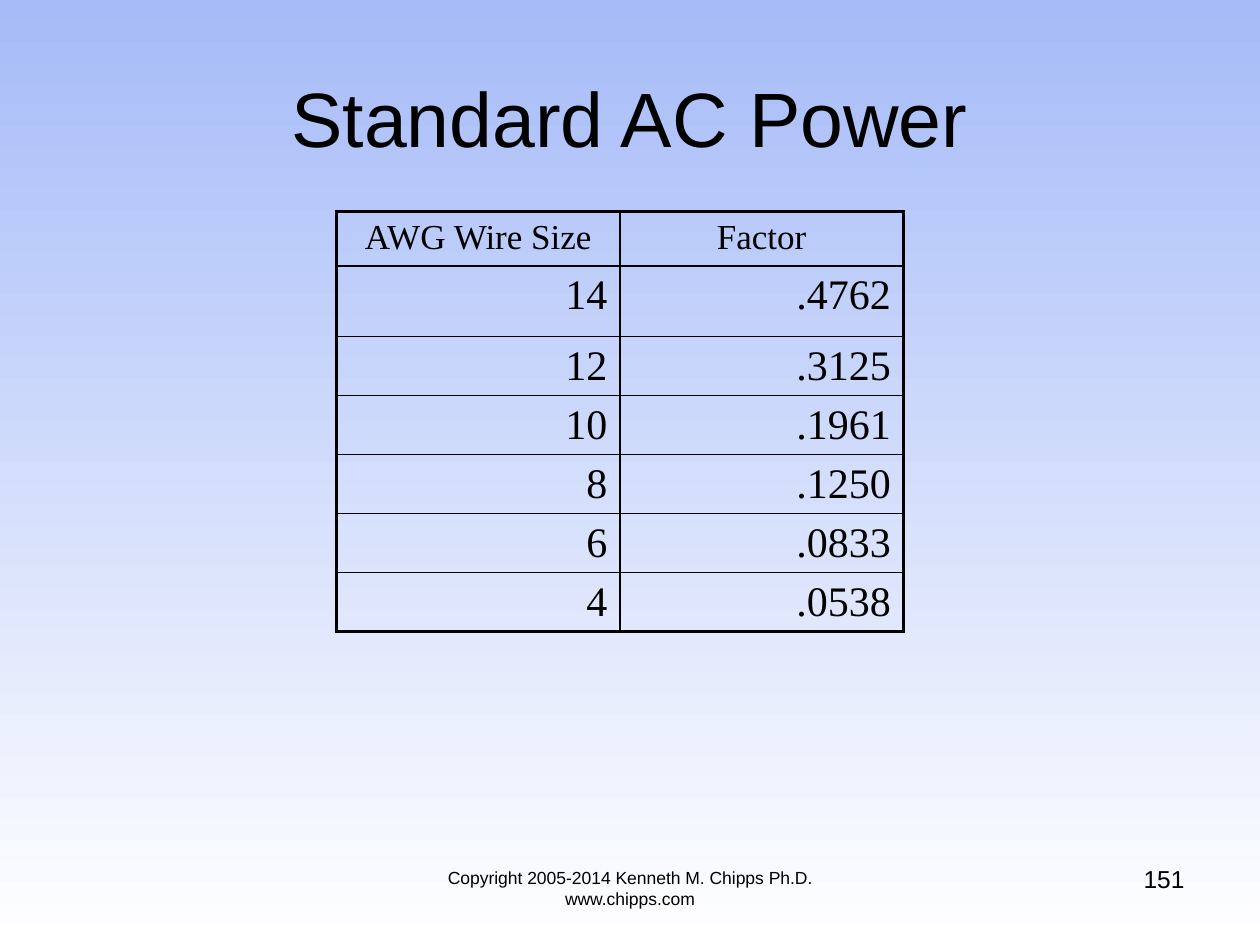
import lxml.etree
import pptx
import pptx.dml.color
import pptx.enum.text
import pptx.oxml.ns
import pptx.util
from pptx.util import Inches

ALIGN = pptx.enum.text.PP_ALIGN
ANCHOR = pptx.enum.text.MSO_ANCHOR
BLACK = "000000"


def color(hex_text):
    return pptx.dml.color.RGBColor.from_string(hex_text)


def write(frame, text, size, font, align):
    """Put one formatted paragraph into a text frame."""
    frame.text = text
    frame.word_wrap = True
    para = frame.paragraphs[0]
    para.alignment = align
    span = para.runs[0]
    span.font.size = pptx.util.Pt(size)
    span.font.name = font
    span.font.color.rgb = color(BLACK)


deck = pptx.Presentation()
deck.slide_width, deck.slide_height = Inches(10), Inches(7.5)
page = deck.slides.add_slide(deck.slide_layouts[5])

# Background fades from blue at the top to white
background = page.background.fill
background.gradient()
background.gradient_angle = 270
for stop, shade in zip(background.gradient_stops, ("A6BBF8", "FFFFFF")):
    stop.color.rgb = color(shade)

title = page.shapes.title
title.left, title.top = Inches(0.5), Inches(0.3)
title.width, title.height = Inches(9), Inches(1.25)
write(title.text_frame, "Standard AC Power", 44, "Arial", ALIGN.CENTER)
title.text_frame.vertical_anchor = ANCHOR.MIDDLE

# Wire size table: thick frame, thin inner lines
rows = [
    ("AWG Wire Size", "Factor"),
    ("14", ".4762"),
    ("12", ".3125"),
    ("10", ".1961"),
    ("8", ".1250"),
    ("6", ".0833"),
    ("4", ".0538"),
]
heights = [0.43, 0.56] + [0.43] * 5
last_row, last_column = len(rows) - 1, len(rows[0]) - 1
table = page.shapes.add_table(
    len(rows), len(rows[0]), Inches(2.67), Inches(1.68), Inches(4.5), Inches(sum(heights))
).table
table.first_row = table.horz_banding = False
for column in table.columns:
    column.width = Inches(2.25)

for r, values in enumerate(rows):
    table.rows[r].height = Inches(heights[r])
    size, align = (20, ALIGN.CENTER) if r == 0 else (24, ALIGN.RIGHT)
    for c, value in enumerate(values):
        cell = table.cell(r, c)
        write(cell.text_frame, value, size, "Times New Roman", align)
        cell.fill.background()
        outer_sides = {"lnL": c == 0, "lnR": c == last_column, "lnT": r == 0, "lnB": r == last_row}
        properties = cell._tc.get_or_add_tcPr()
        for position, (side, is_outer) in enumerate(outer_sides.items()):
            line = lxml.etree.Element(pptx.oxml.ns.qn(f"a:{side}"))
            line.set("w", str(pptx.util.Pt(2.25 if is_outer else 1)))
            fill = lxml.etree.SubElement(line, pptx.oxml.ns.qn("a:solidFill"))
            lxml.etree.SubElement(fill, pptx.oxml.ns.qn("a:srgbClr")).set("val", BLACK)
            properties.insert(position, line)

footers = [
    ("151", 7.17, 6.81, 2.33, 14, ALIGN.RIGHT),
    ("Copyright 2005-2014 Kenneth M. Chipps Ph.D. www.chipps.com", 3, 6.83, 4, 10, ALIGN.CENTER),
]
for text, left, top, width, size, align in footers:
    box = page.shapes.add_textbox(Inches(left), Inches(top), Inches(width), Inches(0.52))
    write(box.text_frame, text, size, "Arial", align)

deck.save("out.pptx")
